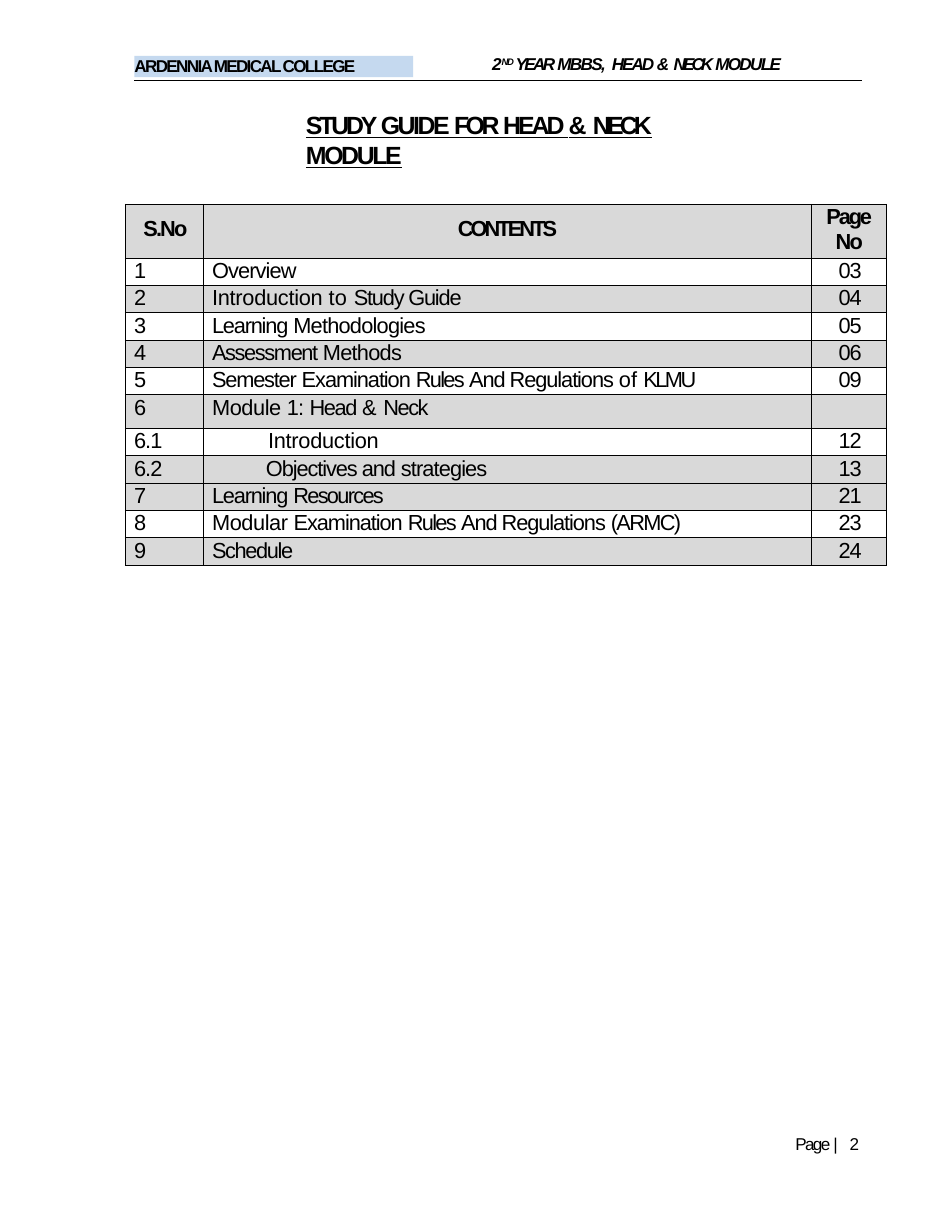
from lxml import etree
from pptx import Presentation
from pptx.dml.color import RGBColor
from pptx.enum.shapes import MSO_CONNECTOR, MSO_SHAPE
from pptx.enum.text import MSO_ANCHOR, MSO_AUTO_SIZE, PP_ALIGN
from pptx.oxml.ns import qn
from pptx.util import Cm, Pt

LINE = MSO_CONNECTOR.STRAIGHT
RECT = MSO_SHAPE.RECTANGLE
TOP = MSO_ANCHOR.TOP
GROW = MSO_AUTO_SIZE.SHAPE_TO_FIT_TEXT
LEFT, MID = PP_ALIGN.LEFT, PP_ALIGN.CENTER

INK, GREY, BLUE = "000000", "D9D9D9", "C5D9EF"
WIDTHS = (1.77, 13.8, 1.7)
HEAD_H, ROW_H = 1.22, 0.62
PAD = 0.2

ROWS = [
    ("1", [("Overview", -0.6)], "03"),
    ("2", [("Introduction ", -0.2), ("to ", 0.2), ("Study Guide", -0.8)], "04"),
    ("3", [("Learning ", -0.8), ("Methodologies", -0.5)], "05"),
    ("4", [("Assessment ", -0.9), ("Methods", -0.5)], "06"),
    ("5", [("Semester ", -0.8), ("Examination ", -0.7), ("Rules ", -1.1),
           ("And Regulations ", -0.7), ("of ", 0), ("KLMU", -1.6)], "09"),
    ("6", [("Module ", -0.3), ("1: ", -0.5), ("Head ", -0.9), ("& ", 0.2),
           ("Neck", -1)], ""),
    ("6.1", [("Introduction", -0.2)], "12"),
    ("6.2", [("Objectives and ", -0.7), ("strategies", -0.6)], "13"),
    ("7", [("Learning ", -0.8), ("Resources", -1.1)], "21"),
    ("8", [("Modular ", -0.3), ("Examination ", -0.7), ("Rules ", -1.1),
           ("And Regulations ", -0.7), ("(ARMC)", -1.1)], "23"),
    ("9", [("Schedule", -0.9)], "24"),
]
DARK = {"2", "4", "6", "6.2", "7", "9"}
INDENT = {"6.1": 1.47, "6.2": 1.42}


def tint(code):
    return RGBColor.from_string(code)


def apply(item, values):
    for name, value in values.items():
        setattr(item, name, value)


class Page:
    def __init__(self, slide, face="Arial"):
        self.slide = slide
        self.face = face

    def text(self, para, runs, size, font=None, indent=0, **form):
        apply(para, form)
        para._p.get_or_add_pPr().set("marL", str(Cm(indent)))
        for words, gap, *rise in runs:
            run = para.add_run()
            run.text = words
            apply(run.font, {"name": self.face, "size": Pt(size), **(font or {})})
            run.font.color.rgb = tint(INK)
            props = run._r.get_or_add_rPr()
            props.set("spc", str(round(gap * 100)))
            if rise:
                apply(run.font, {"size": Pt(rise[1])})
                props.set("baseline", str(rise[0] * 1000))

    def frame(self, shape, runs, size, top=0, **form):
        frame = shape.text_frame
        apply(frame, {"word_wrap": True, "auto_size": GROW, "vertical_anchor": TOP,
                      "margin_left": 0, "margin_right": 0,
                      "margin_top": Cm(top), "margin_bottom": 0})
        self.text(frame.paragraphs[0], runs, size, alignment=LEFT, **form)

    def label(self, box, runs, size, **form):
        shape = self.slide.shapes.add_textbox(*map(Cm, box))
        self.frame(shape, runs, size, indent=0.03, **form)

    def band(self, box, runs, size, **form):
        shape = self.slide.shapes.add_shape(RECT, *map(Cm, box))
        shape.shadow.inherit = False
        shape.fill.solid()
        shape.fill.fore_color.rgb = tint(BLUE)
        shape.line.fill.background()
        self.frame(shape, runs, size, **form)

    def rule(self, left, right, top):
        line = self.slide.shapes.add_connector(LINE, Cm(left), Cm(top), Cm(right), Cm(top))
        line.line.width = Pt(0.75)
        line.line.color.rgb = tint(INK)
        etree.SubElement(line._element.spPr, qn("a:effectLst"))

    def cell(self, cell, lines, dark, top=0, **form):
        apply(cell, {"margin_left": 0, "margin_right": 0, "margin_top": Cm(top),
                     "margin_bottom": 0, "vertical_anchor": TOP})
        if dark:
            cell.fill.solid()
            cell.fill.fore_color.rgb = tint(GREY)
        else:
            cell.fill.background()
        props = cell._tc.get_or_add_tcPr()
        for spot, side in enumerate("LRTB"):
            edge = etree.Element(qn("a:ln" + side), w=str(Pt(0.5)))
            fill = etree.SubElement(edge, qn("a:solidFill"))
            etree.SubElement(fill, qn("a:srgbClr"), val=INK)
            props.insert(spot, edge)
        frame = cell.text_frame
        for spot, runs in enumerate(lines):
            para = frame.add_paragraph() if spot else frame.paragraphs[0]
            self.text(para, runs, 14, **form)

    def table(self, left, top):
        height = HEAD_H + ROW_H * len(ROWS)
        shape = self.slide.shapes.add_table(len(ROWS) + 1, len(WIDTHS), Cm(left), Cm(top),
                                            Cm(sum(WIDTHS)), Cm(height))
        grid = shape.table
        apply(grid, {"first_row": False, "horz_banding": False})
        for col, width in zip(grid.columns, WIDTHS):
            col.width = Cm(width)
        for spot, row in enumerate(grid.rows):
            row.height = Cm(ROW_H if spot else HEAD_H)
        bold = {"bold": True}
        self.cell(grid.cell(0, 0), [[("S.No", -1.2)]], True, 0.28, font=bold, indent=0.41)
        self.cell(grid.cell(0, 1), [[("CONTENTS", -1.9)]], True, 0.28, font=bold,
                  alignment=MID)
        self.cell(grid.cell(0, 2), [[("Page", -1.4)], [("No", -1)]], True, font=bold,
                  alignment=MID, line_spacing=Pt(16.2))
        for spot, (mark, title, page) in enumerate(ROWS, 1):
            gap = -0.6 if "." in mark else 0
            parts = [([(mark, gap)], PAD), (title, INDENT.get(mark, PAD)),
                     ([(page, -0.7)], 0.61)]
            for col, (runs, indent) in enumerate(parts):
                self.cell(grid.cell(spot, col), [runs], mark in DARK, indent=indent,
                          line_spacing=Pt(16.2))


def main():
    deck = Presentation()
    apply(deck, {"slide_width": Cm(21.59), "slide_height": Cm(27.94)})
    page = Page(deck.slides.add_slide(deck.slide_layouts[6]))
    page.rule(3.05, 19.56, 1.83)
    page.label((11.13, 1.19, 8.51, 0.51),
               [("2", -0.6), ("ND ", -0.8, 32, 10.5), ("YEAR ", -1.7), ("MBBS,  ", -1.1),
                ("HEAD ", -1.4), ("& ", -0.2), ("NECK ", -1.9), ("MODULE", -1.1)],
               11, top=0.03, font={"bold": True, "italic": True}, space_before=Pt(1))
    page.label((18.01, 25.76, 1.63, 0.46), [("Page ", -1.1), ("| ", 2.2), ("2", -0.6)],
               11, line_spacing=Pt(11.5))
    page.band((3.05, 1.27, 6.32, 0.48), [("ARDENNIA MEDICAL COLLEGE", -1.1)], 11,
              font={"bold": True}, line_spacing=Pt(12.9))
    page.label((6.91, 2.46, 10.06, 0.74),
               [("STUDY ", -2), ("GUIDE ", -1.6), ("FOR ", -2.2), ("HEAD ", -1.9),
                ("& ", -0.3), ("NECK", -2.4), (" ", -3.2), ("MODULE", -1.5)],
               16, top=0.03, font={"bold": True, "underline": True}, space_before=Pt(0.9))
    page.table(2.84, 4.63)
    deck.save("out.pptx")


if __name__ == "__main__":
    main()
